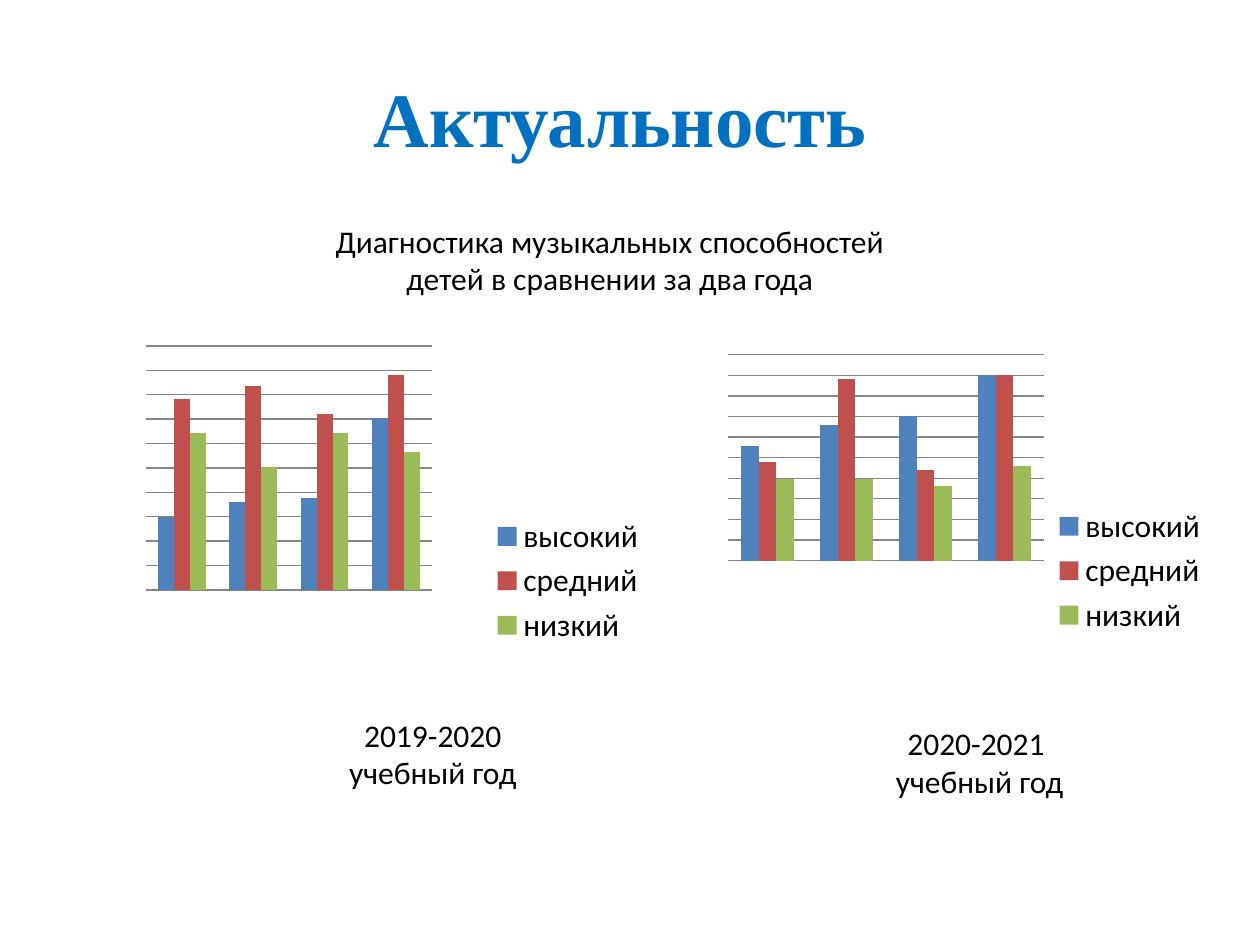
from lxml import etree
from pptx import Presentation
from pptx.chart.data import CategoryChartData
from pptx.dml.color import RGBColor
from pptx.enum import chart as charts, text
from pptx.oxml import ns
from pptx.util import Inches, Pt

BLACK = RGBColor(0x00, 0x00, 0x00)
TITLE_BLUE = RGBColor(0x00, 0x70, 0xC0)
GRID_GREY = RGBColor(0x86, 0x86, 0x86)
LEVELS = {
    "высокий": RGBColor(0x4F, 0x81, 0xBD),
    "средний": RGBColor(0xC0, 0x50, 0x4D),
    "низкий": RGBColor(0x9B, 0xBB, 0x59),
}


def write(frame, content, size=18, font="Calibri", color=BLACK, bold=False):
    """Fill a text frame with centred lines in one format."""
    frame.word_wrap = True
    frame.text = content
    for paragraph in frame.paragraphs:
        paragraph.alignment = text.PP_ALIGN.CENTER
        for run in paragraph.runs:
            run.font.size, run.font.name, run.font.bold = Pt(size), font, bold
            run.font.color.rgb = color


def add_caption(slide, box, content):
    """Add a text box with a caption."""
    caption = slide.shapes.add_textbox(*map(Inches, box))
    write(caption.text_frame, content)


def place_plot(chart, plot_box):
    """Set the inner plot area as fractions of the chart."""
    area = chart._chartSpace.chart.plotArea
    for old in area.findall(ns.qn("c:layout")):
        area.remove(old)
    layout = etree.Element(ns.qn("c:layout"))
    manual = etree.SubElement(layout, ns.qn("c:manualLayout"))
    settings = [("layoutTarget", "inner"), ("xMode", "edge"), ("yMode", "edge")]
    settings += zip("xywh", plot_box)
    for tag, value in settings:
        etree.SubElement(manual, ns.qn(f"c:{tag}")).set("val", str(value))
    area.insert(0, layout)


def add_level_chart(slide, box, plot_box, scores, grid_step):
    """Add a column chart of the three ability levels."""
    data = CategoryChartData()
    data.categories = ["1", "2", "3", "4"]
    for level, values in zip(LEVELS, scores):
        data.add_series(level, values)
    chart = slide.shapes.add_chart(
        charts.XL_CHART_TYPE.COLUMN_CLUSTERED, *map(Inches, box), data
    ).chart
    chart.has_title = False
    chart.font.size, chart.font.name = Pt(18), "Calibri"
    chart.font.color.rgb = BLACK
    chart.has_legend = True
    chart.legend.position = charts.XL_LEGEND_POSITION.RIGHT
    chart.legend.include_in_layout = True
    chart.category_axis.visible = False
    score_axis = chart.value_axis
    score_axis.visible = False
    score_axis.minimum_scale = 0
    score_axis.maximum_scale = round(grid_step * 10, 1)
    score_axis.major_unit = grid_step
    score_axis.has_major_gridlines = True
    grid = score_axis.major_gridlines.format.line
    grid.color.rgb, grid.width = GRID_GREY, Pt(0.75)
    plot = chart.plots[0]
    plot.gap_width, plot.vary_by_categories = 150, False
    for series, color in zip(plot.series, LEVELS.values()):
        series.format.fill.solid()
        series.format.fill.fore_color.rgb = color
    place_plot(chart, plot_box)


def main():
    """Build the slide and save it."""
    deck = Presentation()
    deck.slide_width, deck.slide_height = Inches(10), Inches(7.5)
    slide = deck.slides.add_slide(deck.slide_layouts[5])
    title = slide.shapes.title
    title.left, title.top, title.width, title.height = map(Inches, (0.5, 0.3, 9, 1.25))
    title.text_frame.vertical_anchor = text.MSO_ANCHOR.MIDDLE
    write(title.text_frame, "Актуальность ", size=44, font="Times New Roman",
          color=TITLE_BLUE, bold=True)
    add_level_chart(slide, (0.62, 2.58, 4.61, 4.06), (0.117, 0.041, 0.492, 0.477),
                    [(34, 41, 43, 80), (89, 95, 82, 100), (73, 57, 73, 64)], 11.36)
    add_level_chart(slide, (4.69, 2.42, 5, 4.22), (0.218, 0.094, 0.501, 0.387),
                    [(62, 73, 78, 100), (53, 98, 49, 100), (44, 44, 40, 51)], 11.11)
    add_caption(slide, (2.42, 1.71, 4.84, 0.71),
                "Диагностика музыкальных способностей детей в сравнении за два года")
    add_caption(slide, (2.42, 5.63, 2.03, 0.71), "2019-2020 учебный год")
    add_caption(slide, (6.8, 5.7, 1.95, 0.71), "2020-2021 \nучебный год")
    deck.save("out.pptx")


if __name__ == "__main__":
    main()
